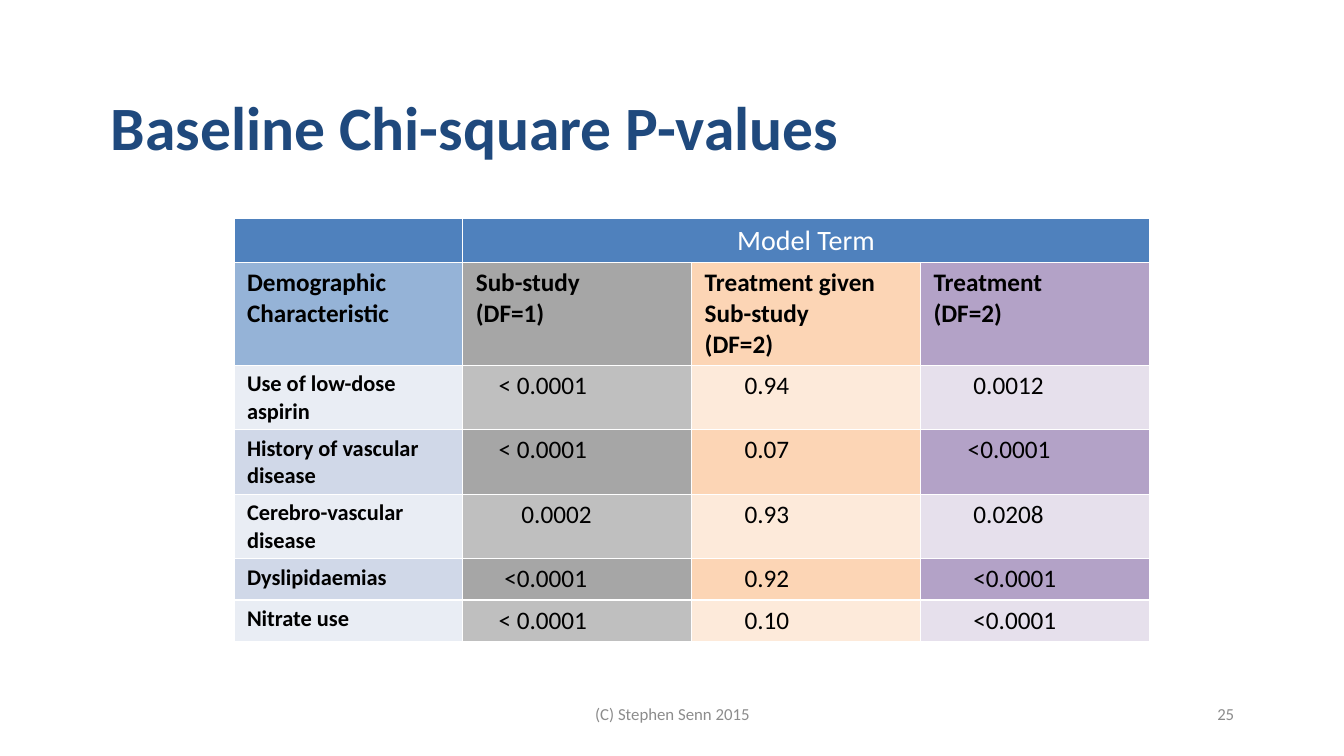
from lxml import etree
from pptx import Presentation
from pptx.dml.color import RGBColor
from pptx.enum.text import MSO_ANCHOR, PP_ALIGN
from pptx.oxml.ns import qn
from pptx.util import Inches, Pt

LEFT, CENTER, RIGHT = PP_ALIGN.LEFT, PP_ALIGN.CENTER, PP_ALIGN.RIGHT
MIDDLE = MSO_ANCHOR.MIDDLE

FONT = "Calibri"
NAVY, BLUE, GREY, WHITE, BLACK = "1F497D", "4F81BD", "8C8C8C", "FFFFFF", "000000"

# Table grid, in inches
TABLE_LEFT, TABLE_TOP, COLUMN_WIDTH = 2.32, 2.17, 2.27
ROW_HEIGHTS = [0.43, 1.02, 0.64, 0.64, 0.64, 0.41, 0.41]
CELL_INSET = 0.13
INDENT_STEP = 0.0565  # one space at 18 pt

HEADINGS = ["Demographic Characteristic", "Sub-study\n(DF=1)",
            "Treatment given Sub-study\n(DF=2)", "Treatment\n(DF=2)"]
HEADING_FILLS = ["95B3D7", "A6A6A6", "FCD5B5", "B3A2C7"]
LIGHT_BAND = ["E9EDF4", "BFBFBF", "FDEADA", "E6E0EC"]
DARK_BAND = ["D0D8E8"] + HEADING_FILLS[1:]

# Characteristic, then (P-value, indent steps) for each model term
P_VALUES = [
    ("Use of low-dose aspirin", ("< 0.0001", 4), ("0.94", 7), ("0.0012", 7)),
    ("History of vascular disease", ("< 0.0001", 4), ("0.07", 7), ("<0.0001", 6)),
    ("Cerebro-vascular disease", ("0.0002", 8), ("0.93", 7), ("0.0208", 7)),
    ("Dyslipidaemias", ("<0.0001", 5), ("0.92", 7), ("<0.0001", 7)),
    ("Nitrate use", ("< 0.0001", 4), ("0.10", 7), ("<0.0001", 7)),
]


def color(hex_value):
    return RGBColor.from_string(hex_value)


def write(frame, text, size=18, ink=BLACK, bold=False, align=LEFT, spacing=None):
    """Fill a text frame, one paragraph per line of text."""
    frame.word_wrap = True
    for index, line in enumerate(text.split("\n")):
        paragraph = frame.add_paragraph() if index else frame.paragraphs[0]
        paragraph.alignment = align
        if spacing:
            paragraph.line_spacing = spacing
        run = paragraph.add_run()
        run.text = line
        run.font.name, run.font.size, run.font.bold = FONT, Pt(size), bold
        run.font.color.rgb = color(ink)


def add_label(slide, box, text, **text_format):
    label = slide.shapes.add_textbox(*(Inches(length) for length in box))
    label.text_frame.vertical_anchor = MIDDLE
    write(label.text_frame, text, **text_format)


def add_borders(cell):
    properties = cell._tc.get_or_add_tcPr()
    for position, side in enumerate(("a:lnL", "a:lnR", "a:lnT", "a:lnB")):
        line = etree.Element(qn(side), w=str(Pt(1)))
        fill = etree.SubElement(line, qn("a:solidFill"))
        etree.SubElement(fill, qn("a:srgbClr"), val=WHITE)
        properties.insert(position, line)


def style_cell(cell, fill, text="", indent=0, **text_format):
    cell.fill.solid()
    cell.fill.fore_color.rgb = color(fill)
    cell.margin_left = Inches(CELL_INSET + indent * INDENT_STEP)
    cell.margin_right = Inches(CELL_INSET)
    add_borders(cell)
    if text:
        write(cell.text_frame, text, **text_format)


def add_p_value_table(slide):
    columns = len(HEADINGS)
    table = slide.shapes.add_table(
        len(ROW_HEIGHTS), columns, Inches(TABLE_LEFT), Inches(TABLE_TOP),
        Inches(COLUMN_WIDTH * columns), Inches(sum(ROW_HEIGHTS))).table
    for column in table.columns:
        column.width = Inches(COLUMN_WIDTH)
    for row, height in zip(table.rows, ROW_HEIGHTS):
        row.height = Inches(height)

    # Spanning header
    for column in range(columns):
        style_cell(table.cell(0, column), BLUE)
    table.cell(0, 1).merge(table.cell(0, columns - 1))
    write(table.cell(0, 1).text_frame, "Model Term", size=20, ink=WHITE, align=CENTER)

    # Column headings
    for column, (heading, fill) in enumerate(zip(HEADINGS, HEADING_FILLS)):
        style_cell(table.cell(1, column), fill, heading, bold=True)

    # Banded body
    for index, (characteristic, *values) in enumerate(P_VALUES):
        band = DARK_BAND if index % 2 else LIGHT_BAND
        row = index + 2
        style_cell(table.cell(row, 0), band[0], characteristic, size=16, bold=True)
        for column, (value, indent) in enumerate(values, start=1):
            style_cell(table.cell(row, column), band[column], value, indent)


def main():
    deck = Presentation()
    deck.slide_width, deck.slide_height = Inches(13.33), Inches(7.5)
    slide = deck.slides.add_slide(deck.slide_layouts[6])

    add_label(slide, (1, 0.67, 11.33, 1.25), "Baseline Chi-square P-values",
              size=44, ink=NAVY, bold=True, spacing=0.9)
    add_p_value_table(slide)

    # Footer
    add_label(slide, (4.56, 6.83, 4.22, 0.5), "(C) Stephen Senn 2015",
              size=12, ink=GREY, align=CENTER)
    add_label(slide, (9.56, 6.83, 2.78, 0.5), "25", size=12, ink=GREY, align=RIGHT)

    deck.save("out.pptx")


if __name__ == "__main__":
    main()
